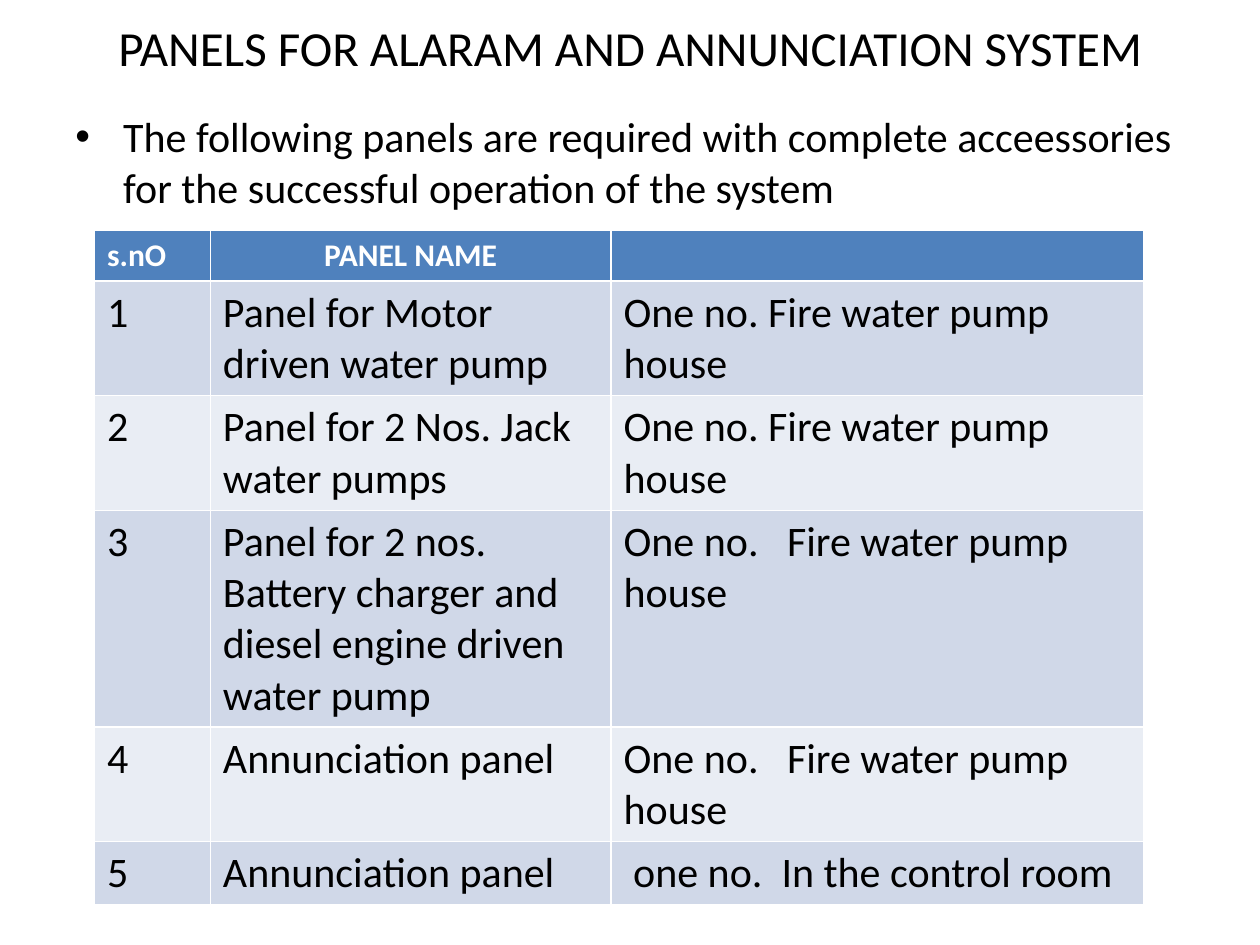
from lxml.etree import SubElement
from pptx import Presentation
from pptx.dml.color import RGBColor
from pptx.enum.text import MSO_ANCHOR, PP_ALIGN
from pptx.oxml.ns import qn
from pptx.util import Inches, Pt

TITLE = "PANELS FOR ALARAM AND ANNUNCIATION SYSTEM"
INTRO = ("The following panels are required with complete acceessories "
         "for the successful operation of the system")
HEADINGS = ("s.nO", "PANEL NAME", "")
PANELS = [
    ("Panel for Motor driven water pump", "One no. Fire water pump house"),
    ("Panel for 2 Nos. Jack water pumps", "One no. Fire water pump house"),
    ("Panel for 2 nos. Battery charger and diesel engine driven  water pump",
     "One no.   Fire water pump house"),
    ("Annunciation panel", "One no.   Fire water pump house"),
    ("Annunciation panel", " one no.  In the control room"),
]
COLUMN_WIDTHS = (0.92, 3.18, 4.23)
ROW_HEIGHTS = (0.4, 0.91, 0.91, 1.72, 0.91, 0.5)

BLACK = RGBColor(0x00, 0x00, 0x00)
WHITE = RGBColor(0xFF, 0xFF, 0xFF)
HEADER_BLUE = RGBColor(0x4F, 0x81, 0xBD)
BANDS = (RGBColor(0xE9, 0xED, 0xF4), RGBColor(0xD0, 0xD8, 0xE8))

TITLE_FORMAT = {"name": "Calibri", "size": Pt(28), "bold": False}
BODY_FORMAT = {"name": "Calibri", "size": Pt(24), "bold": False}
HEADER_FORMAT = {"name": "Calibri", "size": Pt(18), "bold": True}


def write(paragraph, text, font_format, color):
    paragraph.text = text
    for key, value in font_format.items():
        setattr(paragraph.font, key, value)
    paragraph.font.color.rgb = color


def add_text(slide, box, anchor):
    frame = slide.shapes.add_textbox(*map(Inches, box)).text_frame
    frame.word_wrap = True
    frame.vertical_anchor = anchor
    return frame.paragraphs[0]


def add_bullet(paragraph):
    properties = paragraph._p.get_or_add_pPr()
    properties.set("marL", str(Inches(0.38)))
    properties.set("indent", str(Inches(-0.38)))
    SubElement(properties, qn("a:buFont"), typeface="Arial")
    SubElement(properties, qn("a:buChar"), char="•")


def add_panel_table(slide):
    rows = [HEADINGS] + [(str(number), *panel)
                         for number, panel in enumerate(PANELS, 1)]
    table = slide.shapes.add_table(
        len(rows), len(HEADINGS), Inches(0.75), Inches(1.83),
        Inches(sum(COLUMN_WIDTHS)), Inches(sum(ROW_HEIGHTS))).table
    for column, width in zip(table.columns, COLUMN_WIDTHS):
        column.width = Inches(width)
    for index, (row, height, texts) in enumerate(
            zip(table.rows, ROW_HEIGHTS, rows)):
        row.height = Inches(height)
        header = index == 0
        for cell, text in zip(row.cells, texts):
            cell.fill.solid()
            cell.fill.fore_color.rgb = HEADER_BLUE if header else BANDS[index % 2]
            write(cell.text_frame.paragraphs[0], text,
                  HEADER_FORMAT if header else BODY_FORMAT,
                  WHITE if header else BLACK)
    table.cell(0, 1).text_frame.paragraphs[0].alignment = PP_ALIGN.CENTER


def main():
    presentation = Presentation()
    presentation.slide_width = Inches(10)
    presentation.slide_height = Inches(7.5)
    slide = presentation.slides.add_slide(presentation.slide_layouts[6])

    title = add_text(slide, (0.5, 0, 9, 0.75), MSO_ANCHOR.MIDDLE)
    title.alignment = PP_ALIGN.CENTER
    write(title, TITLE, TITLE_FORMAT, BLACK)

    intro = add_text(slide, (0.5, 0.83, 9, 6.42), MSO_ANCHOR.TOP)
    add_bullet(intro)
    write(intro, INTRO, BODY_FORMAT, BLACK)

    add_panel_table(slide)
    presentation.save("out.pptx")


if __name__ == "__main__":
    main()
